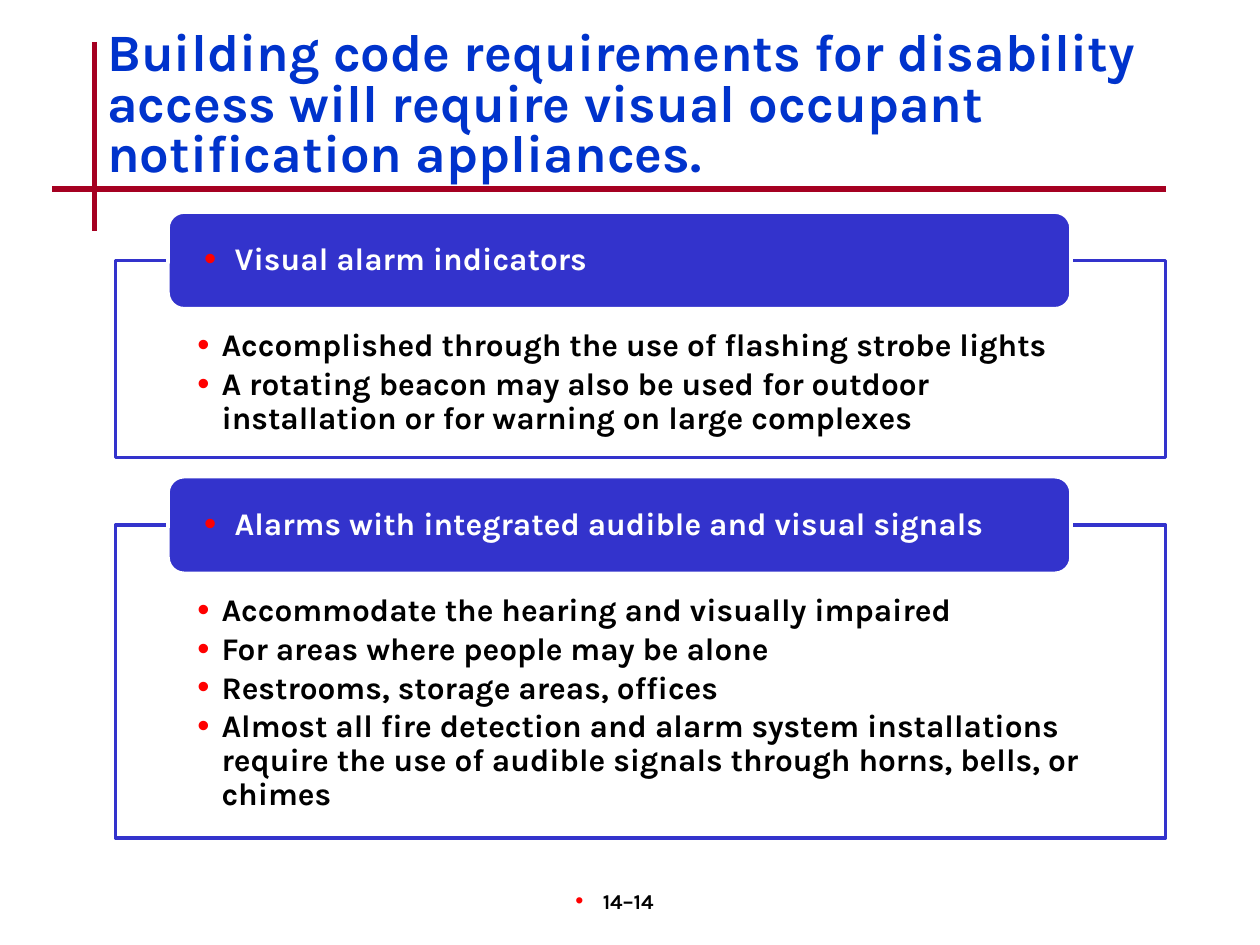
from typing import NamedTuple

from lxml.etree import SubElement
from pptx import Presentation
from pptx.dml.color import RGBColor
from pptx.enum.shapes import MSO_CONNECTOR, MSO_SHAPE
from pptx.enum.text import MSO_ANCHOR, MSO_AUTO_SIZE, PP_ALIGN
from pptx.oxml.ns import qn
from pptx.util import Emu, Pt

EMU_PER_PX = 7620  # 120 px to the inch
FONT = "Karla"
BLUE, RED, WHITE, BLACK = "3333CC", "FF0000", "FFFFFF", "000000"
TITLE_BLUE, RULE_RED = "0033CC", "A50021"


class Section(NamedTuple):
    heading: str
    points: list[str]
    top: int
    height: int


SECTIONS = [
    Section("Visual alarm indicators", [
        "Accomplished through the use of flashing strobe lights",
        "A rotating beacon may also be used for outdoor installation "
        "or for warning on large complexes",
    ], 248, 188),
    Section("Alarms with integrated audible and visual signals", [
        "Accommodate the hearing and visually impaired",
        "For areas where people may be alone",
        "Restrooms, storage areas, offices",
        "Almost all fire detection and alarm system installations require "
        "the use of audible signals through horns, bells, or chimes",
    ], 500, 298),
]


def px(length: int) -> Emu:
    return Emu(length * EMU_PER_PX)


def color(value: str) -> RGBColor:
    return RGBColor.from_string(value)


def place(shape, left: int, top: int, width: int, height: int) -> None:
    shape.left, shape.top = px(left), px(top)
    shape.width, shape.height = px(width), px(height)


def paint(shape, fill: str, line: str) -> None:
    shape.fill.solid()
    shape.fill.fore_color.rgb = color(fill)
    shape.line.color.rgb = color(line)
    shape.line.width = Pt(2)


def add_bullet(paragraph, hang: int) -> None:
    properties = paragraph._p.get_or_add_pPr()
    properties.set("marL", str(px(hang)))
    properties.set("indent", str(-px(hang)))
    bullet_color = SubElement(properties, qn("a:buClr"))
    SubElement(bullet_color, qn("a:srgbClr"), val=RED)
    SubElement(properties, qn("a:buSzPct"), val="110000")
    SubElement(properties, qn("a:buFont"), typeface="Arial")
    SubElement(properties, qn("a:buChar"), char="•")


def write(shape, lines: list[str], *, size: int, ink: str, insets=(12, 6, 12, 6),
          anchor=MSO_ANCHOR.TOP, align=PP_ALIGN.LEFT, level: int = 0,
          hang: int = 0, spacing: float = 1.0, after: float = 0) -> None:
    """Fill a shape with paragraphs; hang is the bullet's hanging indent."""
    frame = shape.text_frame
    frame.word_wrap = True
    frame.auto_size = MSO_AUTO_SIZE.NONE
    frame.vertical_anchor = anchor
    (frame.margin_left, frame.margin_top,
     frame.margin_right, frame.margin_bottom) = map(px, insets)
    frame.text = "\n".join(lines)
    for paragraph in frame.paragraphs:
        if hang:
            add_bullet(paragraph, hang)
        paragraph.level = level
        paragraph.alignment = align
        paragraph.line_spacing = spacing
        paragraph.space_before = Pt(0)
        paragraph.space_after = Pt(after)
        for run in paragraph.runs:
            run.font.name = FONT
            run.font.size = Pt(size)
            run.font.bold = True
            run.font.color.rgb = color(ink)


def add_rule(slide, x1: int, y1: int, x2: int, y2: int) -> None:
    """Draw a heading rule behind the title."""
    rule = slide.shapes.add_connector(
        MSO_CONNECTOR.STRAIGHT, px(x1), px(y1), px(x2), px(y2))
    rule.line.color.rgb = color(RULE_RED)
    rule.line.width = Pt(3)
    SubElement(rule.element.spPr, qn("a:effectLst"))
    slide.shapes.title.element.addprevious(rule.element)


def add_section(slide, body, section: Section) -> None:
    place(body, 110, section.top, 1000, section.height)
    paint(body, WHITE, BLUE)
    write(body, section.points, size=18, ink=BLACK, insets=(78, 66, 78, 17),
          level=1, hang=23, spacing=0.9, after=2.7)

    heading = slide.shapes.add_shape(
        MSO_SHAPE.ROUNDED_RECTANGLE, px(160), px(section.top - 46), px(860), px(92))
    heading.shadow.inherit = False
    paint(heading, BLUE, WHITE)
    write(heading, [section.heading], size=18, ink=WHITE, insets=(30, 0, 30, 0),
          anchor=MSO_ANCHOR.MIDDLE, hang=29, spacing=0.9)


def main() -> None:
    presentation = Presentation()
    presentation.slide_width, presentation.slide_height = px(1200), px(900)
    slide = presentation.slides.add_slide(presentation.slide_layouts[3])

    title = slide.shapes.title
    place(title, 90, 24, 1020, 120)
    write(title, ["Building code requirements for disability access will require "
                  "visual occupant notification appliances."],
          size=30, ink=TITLE_BLUE, spacing=0.8)
    add_rule(slide, 90, 40, 90, 220)
    add_rule(slide, 50, 180, 1110, 180)

    bodies = [slide.placeholders[1], slide.placeholders[2]]
    for body, section in zip(bodies, SECTIONS):
        add_section(slide, body, section)

    page_number = slide.shapes.add_textbox(px(470), px(840), px(250), px(60))
    write(page_number, ["14–14"], size=12, ink=BLACK, insets=(12, 6, 31, 6),
          align=PP_ALIGN.CENTER, hang=26)

    presentation.save("out.pptx")


if __name__ == "__main__":
    main()
